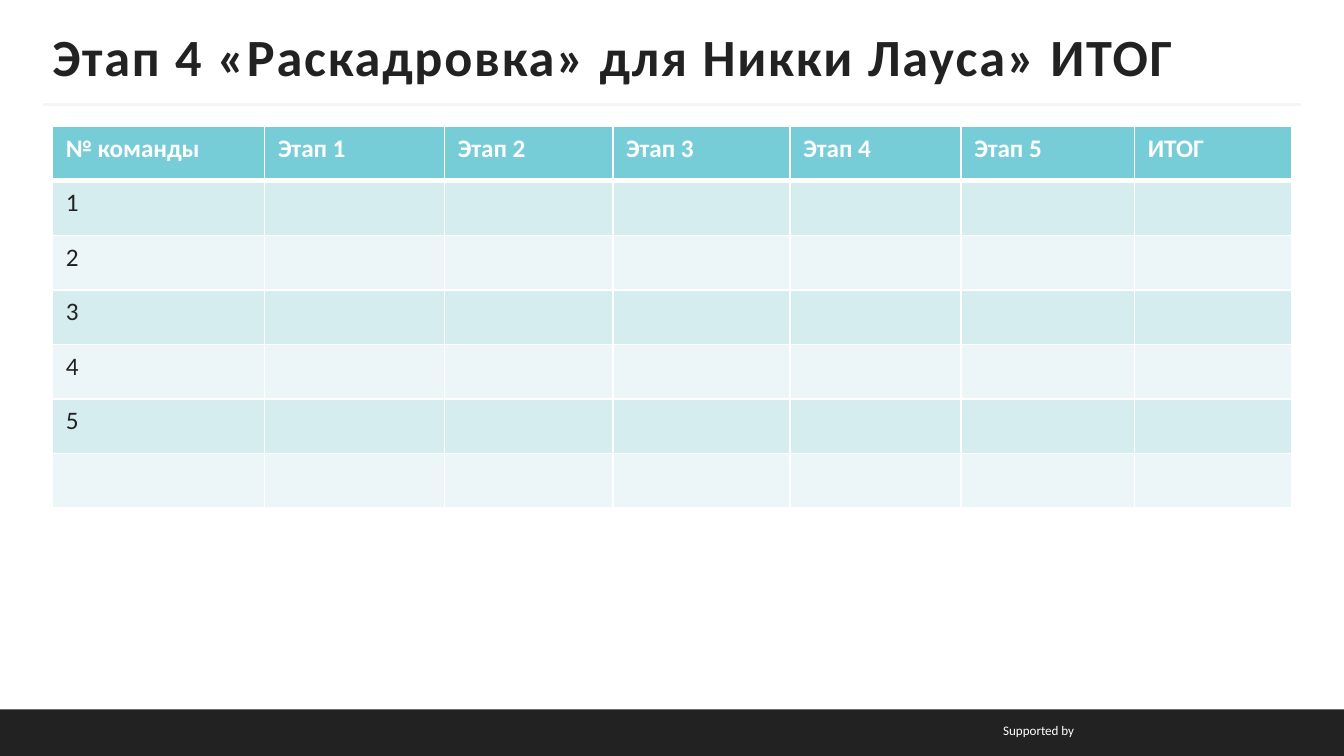
"""Build the storyboard stage results slide with its score table."""
from dataclasses import dataclass

from lxml.etree import SubElement
from pptx import Presentation
from pptx.dml.color import RGBColor
from pptx.enum.shapes import MSO_CONNECTOR, MSO_SHAPE
from pptx.enum.text import MSO_ANCHOR, PP_ALIGN
from pptx.oxml.ns import qn
from pptx.slide import Slide
from pptx.table import _Cell
from pptx.text.text import _Paragraph
from pptx.util import Cm, Pt

WHITE = RGBColor(0xFF, 0xFF, 0xFF)
DARK = RGBColor(0x22, 0x22, 0x22)
RULE_GRAY = RGBColor(0xF5, 0xF5, 0xF5)
HEADER_TEAL = RGBColor(0x76, 0xCD, 0xD8)
BANDS = (RGBColor(0xD6, 0xED, 0xF0), RGBColor(0xEC, 0xF6, 0xF8))

FONT = "Calibri"
SLIDE_WIDTH, SLIDE_HEIGHT = 25.4, 14.29
FOOTER_TOP = 13.41
MARGIN = 0.99
CONTENT_WIDTH = 23.42
ROW_HEIGHT = 1.03
TEAM_COUNT = 5
THIN, THICK = Pt(1), Pt(3)


@dataclass(frozen=True)
class Column:
    heading: str
    width: float


@dataclass(frozen=True)
class Label:
    text: str
    left: float
    top: float
    width: float
    height: float
    size: float
    color: RGBColor
    bold: bool = False
    alignment: PP_ALIGN = PP_ALIGN.LEFT
    anchor: MSO_ANCHOR = MSO_ANCHOR.TOP
    side_inset: float = 0.25
    spacing: int = 0


COLUMNS = (
    Column("№ команды", 4.01),
    Column("Этап 1", 3.4),
    Column("Этап 2", 3.18),
    Column("Этап 3", 3.35),
    Column("Этап 4", 3.23),
    Column("Этап 5", 3.28),
    Column("ИТОГ", 2.97),
)
LABELS = (
    Label("Supported by", 13.82, 13.54, 6.73, 0.56, 7, WHITE, alignment=PP_ALIGN.RIGHT),
    Label("Этап 4 «Раскадровка» для Никки Лауса» ИТОГ", MARGIN, 0.64, CONTENT_WIDTH, 0.84,
          28, DARK, bold=True, anchor=MSO_ANCHOR.MIDDLE, side_inset=0, spacing=100),
)


def set_font(paragraph: _Paragraph, size: float, color: RGBColor, bold: bool) -> None:
    font = paragraph.font
    font.name = FONT
    font.size = Pt(size)
    font.bold = bold
    font.color.rgb = color


def add_label(slide: Slide, label: Label) -> None:
    shape = slide.shapes.add_textbox(
        Cm(label.left), Cm(label.top), Cm(label.width), Cm(label.height))
    frame = shape.text_frame
    frame.word_wrap = True
    frame.vertical_anchor = label.anchor
    frame.margin_left = frame.margin_right = Cm(label.side_inset)
    paragraph = frame.paragraphs[0]
    run = paragraph.add_run()
    run.text = label.text
    paragraph.alignment = label.alignment
    set_font(paragraph, label.size, label.color, label.bold)
    if label.spacing:
        run.font.bold = label.bold
        run.font._element.set("spc", str(label.spacing))


def add_footer_bar(slide: Slide) -> None:
    bar = slide.shapes.add_shape(
        MSO_SHAPE.RECTANGLE, 0, Cm(FOOTER_TOP), Cm(SLIDE_WIDTH), Cm(SLIDE_HEIGHT - FOOTER_TOP))
    bar.shadow.inherit = False
    bar.fill.solid()
    bar.fill.fore_color.rgb = DARK
    bar.line.fill.background()


def add_title_rule(slide: Slide) -> None:
    rule = slide.shapes.add_connector(
        MSO_CONNECTOR.STRAIGHT, Cm(0.81), Cm(1.98), Cm(SLIDE_WIDTH - 0.81), Cm(1.98))
    rule.line.color.rgb = RULE_GRAY
    rule.line.width = Pt(1.5)
    SubElement(rule._element.spPr, qn("a:effectLst"))


def set_borders(cell: _Cell, top: int, bottom: int) -> None:
    properties = cell._tc.get_or_add_tcPr()
    for side, width in (("L", THIN), ("R", THIN), ("T", top), ("B", bottom)):
        border = SubElement(properties, qn(f"a:ln{side}"), w=str(int(width)))
        fill = SubElement(border, qn("a:solidFill"))
        SubElement(fill, qn("a:srgbClr"), val=str(WHITE))


def add_score_table(slide: Slide) -> None:
    row_count = TEAM_COUNT + 2
    table = slide.shapes.add_table(
        row_count, len(COLUMNS), Cm(MARGIN), Cm(2.39),
        Cm(CONTENT_WIDTH), Cm(ROW_HEIGHT * row_count)).table
    for table_column, column in zip(table.columns, COLUMNS):
        table_column.width = Cm(column.width)
    for row_index, row in enumerate(table.rows):
        row.height = Cm(ROW_HEIGHT)
        is_header = row_index == 0
        for column_index, cell in enumerate(row.cells):
            if is_header:
                cell.text = COLUMNS[column_index].heading
            elif column_index == 0 and row_index <= TEAM_COUNT:
                cell.text = str(row_index)
            set_font(cell.text_frame.paragraphs[0], 13.5, WHITE if is_header else DARK, is_header)
            set_borders(cell, THICK if row_index == 1 else THIN, THICK if is_header else THIN)
            cell.fill.solid()
            cell.fill.fore_color.rgb = HEADER_TEAL if is_header else BANDS[(row_index - 1) % 2]


def main() -> None:
    presentation = Presentation()
    presentation.slide_width = Cm(SLIDE_WIDTH)
    presentation.slide_height = Cm(SLIDE_HEIGHT)
    slide = presentation.slides.add_slide(presentation.slide_layouts[6])
    add_footer_bar(slide)
    add_title_rule(slide)
    for label in LABELS:
        add_label(slide, label)
    add_score_table(slide)
    presentation.save("out.pptx")


if __name__ == "__main__":
    main()
